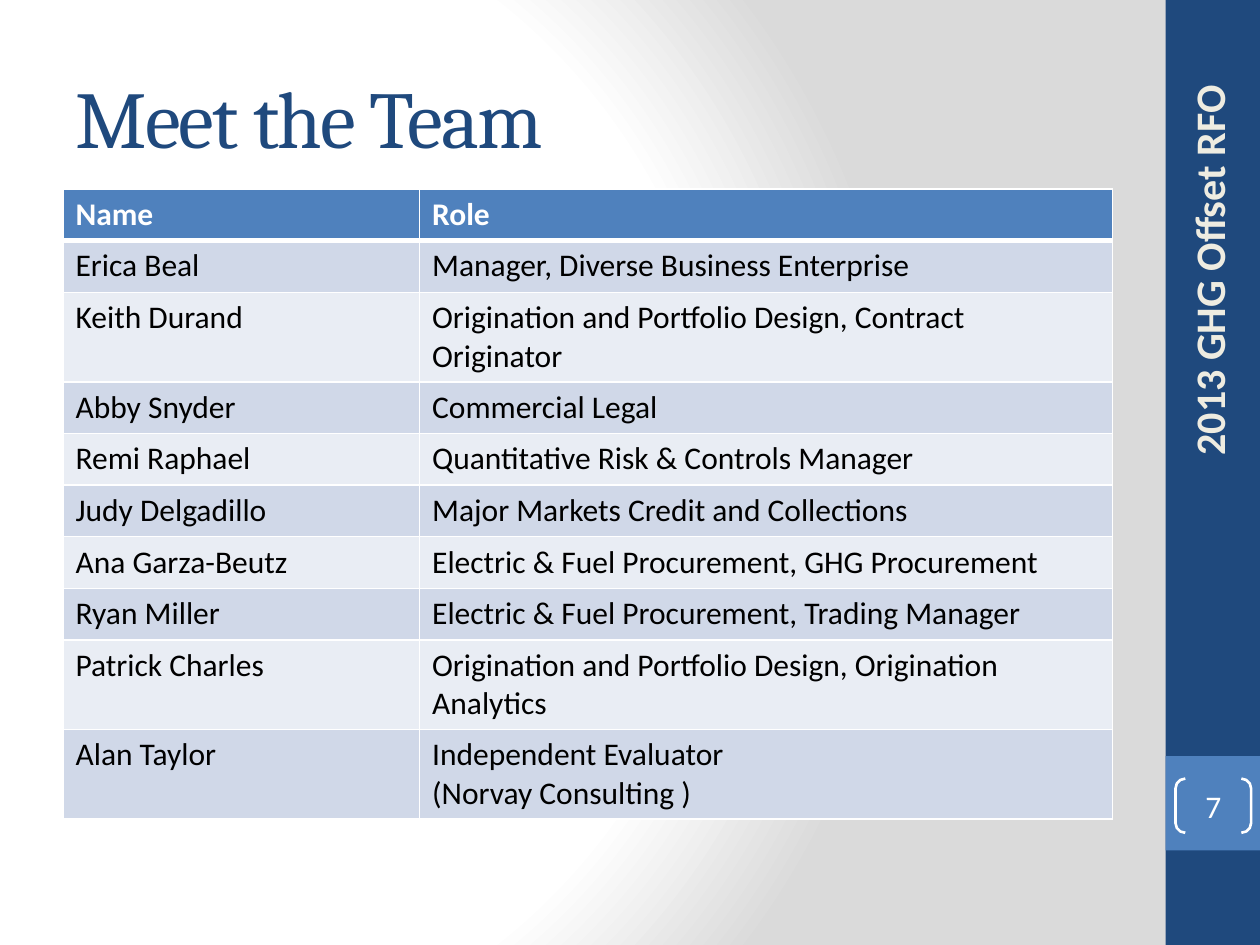
from pptx import Presentation
from pptx import util as u
from pptx.dml import color
from pptx.enum import shapes, text
from pptx.oxml import ns, parse_xml

NAVY, BLUE, WHITE, BLACK = "1F497D", "4F81BD", "FFFFFF", "000000"
CREAM, GRAY = "EEECE1", "DADADA"
BANDS = ("D0D8E8", "E9EDF4")

TEAM = [
    ("Name", "Role"),
    ("Erica Beal", "Manager, Diverse Business Enterprise"),
    ("Keith Durand", "Origination and Portfolio Design, Contract Originator"),
    ("Abby Snyder", "Commercial Legal"),
    ("Remi Raphael", "Quantitative Risk & Controls Manager"),
    ("Judy Delgadillo", "Major Markets Credit and Collections"),
    ("Ana Garza-Beutz", "Electric & Fuel Procurement, GHG Procurement"),
    ("Ryan Miller", "Electric & Fuel Procurement, Trading Manager"),
    ("Patrick Charles", "Origination and Portfolio Design, Origination Analytics"),
    ("Alan Taylor", "Independent Evaluator\n(Norvay Consulting )"),
]


def rgb(value):
    return color.RGBColor.from_string(value)


def inches(*lengths):
    return [u.Inches(length) for length in lengths]


class SlideBuilder:
    heading_font = "Cambria"
    body_font = "Calibri"

    def __init__(self, presentation):
        self.slide = presentation.slides.add_slide(presentation.slide_layouts[5])

    def background(self, stops, focus):
        """Circular gradient; focus holds the l, t, r, b insets in percent."""
        self.slide.background.fill.gradient()
        gradient = self.slide._element.find(".//" + ns.qn("a:gradFill"))
        stop_xml = "".join(
            f'<a:gs pos="{position * 1000}"><a:srgbClr val="{value}"/></a:gs>'
            for position, value in stops)
        sides = " ".join(f'{side}="{inset * 1000}"' for side, inset in zip("ltrb", focus))
        gradient.getparent().replace(gradient, parse_xml(
            f'<a:gradFill {ns.nsdecls("a")} rotWithShape="1"><a:gsLst>{stop_xml}</a:gsLst>'
            f'<a:path path="circle"><a:fillToRect {sides}/></a:path></a:gradFill>'))

    def set_text(self, frame, words, size, value, font=None, bold=False,
                 align=text.PP_ALIGN.LEFT):
        frame.word_wrap = True
        frame.text = words
        for paragraph in frame.paragraphs:
            paragraph.alignment = align
            paragraph.font.name = font or self.body_font
            paragraph.font.size = u.Pt(size)
            paragraph.font.bold = bold
            paragraph.font.color.rgb = rgb(value)

    def title(self, words, box):
        shape = self.slide.shapes.title
        shape.left, shape.top, shape.width, shape.height = inches(*box)
        frame = shape.text_frame
        self.set_text(frame, words, 46, NAVY, self.heading_font)
        frame.vertical_anchor = text.MSO_ANCHOR.MIDDLE
        frame.paragraphs[0].runs[0].font._element.set("spc", "-100")

    def block(self, box, fill):
        shape = self.slide.shapes.add_shape(shapes.MSO_SHAPE.RECTANGLE, *inches(*box))
        shape.shadow.inherit = False
        shape.fill.solid()
        shape.fill.fore_color.rgb = rgb(fill)
        shape.line.fill.background()

    def bracketed_number(self, number, box):
        shape = self.slide.shapes.add_shape(shapes.MSO_SHAPE.DOUBLE_BRACKET, *inches(*box))
        shape.shadow.inherit = False
        shape.adjustments[0] = 0.18
        shape.fill.background()
        shape.line.color.rgb = rgb(WHITE)
        shape.line.width = u.Pt(1.5)
        frame = shape.text_frame
        frame.margin_left = frame.margin_right = frame.margin_top = frame.margin_bottom = 0
        frame.vertical_anchor = text.MSO_ANCHOR.MIDDLE
        self.set_text(frame, number, 18, WHITE, align=text.PP_ALIGN.CENTER)

    def vertical_label(self, words, box):
        shape = self.slide.shapes.add_textbox(*inches(*box))
        shape.rotation = 270
        shape.text_frame.vertical_anchor = text.MSO_ANCHOR.MIDDLE
        self.set_text(shape.text_frame, words, 24, CREAM, bold=True,
                      align=text.PP_ALIGN.RIGHT)

    def borders(self, cell, bottom=1, top=1):
        properties = cell._tc.get_or_add_tcPr()
        for side, width in (("L", 1), ("R", 1), ("T", top), ("B", bottom)):
            properties.append(parse_xml(
                f'<a:ln{side} {ns.nsdecls("a")} w="{u.Pt(width)}"><a:solidFill>'
                f'<a:srgbClr val="{WHITE}"/></a:solidFill></a:ln{side}>'))

    def table(self, rows, left, top, widths, row_height):
        table = self.slide.shapes.add_table(
            len(rows), len(widths),
            *inches(left, top, sum(widths), row_height * len(rows))).table
        for column, width in zip(table.columns, widths):
            column.width = u.Inches(width)
        for row_index, row in enumerate(rows):
            header = row_index == 0
            table.rows[row_index].height = u.Inches(row_height)
            for column_index, words in enumerate(row):
                cell = table.cell(row_index, column_index)
                self.borders(cell, bottom=3 if header else 1,
                             top=3 if row_index == 1 else 1)
                cell.fill.solid()
                cell.fill.fore_color.rgb = rgb(BLUE if header else BANDS[(row_index - 1) % 2])
                self.set_text(cell.text_frame, words, 18, WHITE if header else BLACK,
                              bold=header)


def main():
    presentation = Presentation()
    presentation.slide_width, presentation.slide_height = inches(10, 7.5)
    builder = SlideBuilder(presentation)

    # Background and side band
    builder.background([(0, WHITE), (75, WHITE), (100, GRAY)], (20, 50, 100, 50))
    builder.block((9.25, 0, 0.75, 7.5), NAVY)
    builder.block((9.25, 6, 0.75, 0.75), BLUE)

    # Title and team table
    builder.title("Meet the Team", (0.5, 0.3, 8.33, 1.25))
    builder.table(TEAM, 0.5, 1.5, (2.83, 5.5), 0.41)

    # Page number and label on the side band
    builder.bracketed_number("7", (9.33, 6.18, 0.6, 0.43))
    builder.vertical_label("2013 GHG Offset RFO", (7.8, 2.17, 3.58, 0.4))

    presentation.save("out.pptx")


if __name__ == "__main__":
    main()
